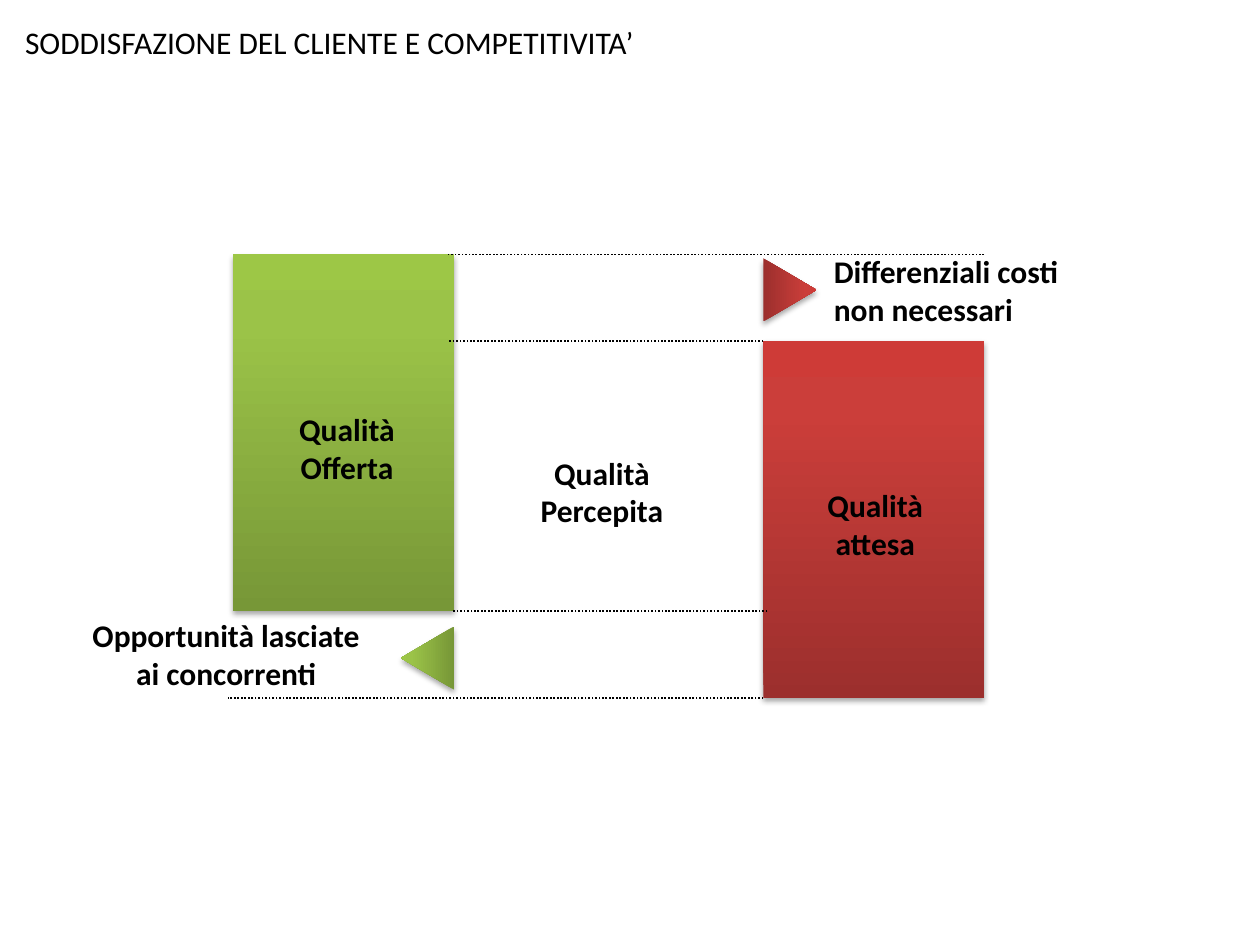
import copy
from dataclasses import dataclass

import lxml.etree
import pptx
import pptx.dml.color
import pptx.enum.dml
import pptx.enum.shapes
import pptx.enum.text
import pptx.oxml.ns
import pptx.util

Cm = pptx.util.Cm
qn = pptx.oxml.ns.qn
RGBColor = pptx.dml.color.RGBColor
Shapes = pptx.enum.shapes.MSO_SHAPE
Align = pptx.enum.text.PP_ALIGN
AutoSize = pptx.enum.text.MSO_AUTO_SIZE


@dataclass(frozen=True)
class Theme:
    font: str = "Calibri"
    size: int = 18
    black: str = "000000"
    green: tuple = ("779737", "9BC348", "9DC746")
    red: tuple = ("9C2F2D", "CB3E3A", "CE3B37")
    stops: tuple = (0, 0.8, 1)


theme = Theme()


def format_text(shape, alignment, bold):
    shape.text_frame.word_wrap = True
    paragraph = shape.text_frame.paragraphs[0]
    paragraph.alignment = alignment
    font = paragraph.runs[0].font
    font.name = theme.font
    font.size = pptx.util.Pt(theme.size)
    font.bold = bold
    font.color.rgb = RGBColor.from_string(theme.black)


def add_shadow(effects):
    shadow = lxml.etree.SubElement(
        effects, qn("a:outerShdw"), blurRad="40000", dist="23000", dir="5400000", rotWithShape="0"
    )
    color = lxml.etree.SubElement(shadow, qn("a:srgbClr"), val=theme.black)
    lxml.etree.SubElement(color, qn("a:alpha"), val="35000")


presentation = pptx.Presentation()
presentation.slide_width = Cm(25.4)
presentation.slide_height = Cm(19.05)
slide = presentation.slides.add_slide(presentation.slide_layouts[5])

title = slide.shapes.title
title.left, title.top, title.width, title.height = Cm(0.25), Cm(0.33), Cm(19.46), Cm(1.02)
title.text_frame.text = "SODDISFAZIONE DEL CLIENTE E COMPETITIVITA’"
title.text_frame.auto_size = AutoSize.NONE
title.text_frame.vertical_anchor = pptx.enum.text.MSO_ANCHOR.MIDDLE
format_text(title, Align.LEFT, False)
title_fill = title._element.find(".//" + qn("a:solidFill"))
title_effects = lxml.etree.Element(qn("a:effectLst"))
title_fill.addnext(title_effects)
add_shadow(title_effects)

offered_left, expected_left = 4.7, 15.39
offered_top, expected_top = 5.13, 6.88
bar_width, bar_height = 4.45, 7.19
offered_bottom = offered_top + bar_height
expected_bottom = expected_top + bar_height
expected_right = expected_left + bar_width

gradient_shapes = [
    (Shapes.RECTANGLE, offered_left, offered_top, bar_width, bar_height, 0, theme.green),
    (Shapes.RECTANGLE, expected_left, expected_top, bar_width, bar_height, 0, theme.red),
    (Shapes.ISOSCELES_TRIANGLE, 7.98, 12.73, 1.27, 1.07, 270, theme.green),
    (Shapes.ISOSCELES_TRIANGLE, 15.29, 5.31, 1.27, 1.07, 90, theme.red),
]
for kind, left, top, width, height, rotation, colors in gradient_shapes:
    shape = slide.shapes.add_shape(kind, Cm(left), Cm(top), Cm(width), Cm(height))
    shape.rotation = rotation
    shape.line.fill.background()
    shape.fill.gradient()
    shape.fill.gradient_angle = 90
    stop_list = shape._element.spPr.find(".//" + qn("a:gsLst"))
    stop_list.append(copy.deepcopy(stop_list[0]))
    for stop, position, color in zip(shape.fill.gradient_stops, theme.stops, colors):
        stop.position = position
        stop.color.rgb = RGBColor.from_string(color)
    shape.shadow.inherit = False
    add_shadow(shape._element.spPr.find(qn("a:effectLst")))

guides = [
    (9.04, expected_right, offered_top),
    (9.04, expected_left, expected_top),
    (9.12, 15.47, offered_bottom),
    (4.6, expected_left, expected_bottom),
]
for start, end, height in guides:
    guide = slide.shapes.add_connector(
        pptx.enum.shapes.MSO_CONNECTOR.STRAIGHT, Cm(end), Cm(height), Cm(start), Cm(height)
    )
    guide.line.color.rgb = RGBColor.from_string(theme.black)
    guide.line.width = pptx.util.Pt(1)
    guide.line.dash_style = pptx.enum.dml.MSO_LINE.ROUND_DOT
    lxml.etree.SubElement(guide._element.spPr, qn("a:effectLst"))

labels = [
    ("Qualità Offerta", 5.38, 8.15, 3.23, Align.CENTER),
    ("Qualità attesa", 16.03, 9.68, 3.23, Align.CENTER),
    ("Qualità Percepita", 10.52, 9.02, 3.23, Align.CENTER),
    ("Opportunità lasciate ai concorrenti", 1.5, 12.29, 6.12, Align.CENTER),
    ("Differenziali costi non necessari", 16.56, 4.95, 5.21, Align.LEFT),
]
for text, left, top, width, alignment in labels:
    label = slide.shapes.add_textbox(Cm(left), Cm(top), Cm(width), Cm(1.8))
    label.text_frame.text = text
    label.text_frame.auto_size = AutoSize.SHAPE_TO_FIT_TEXT
    format_text(label, alignment, True)

presentation.save("out.pptx")
